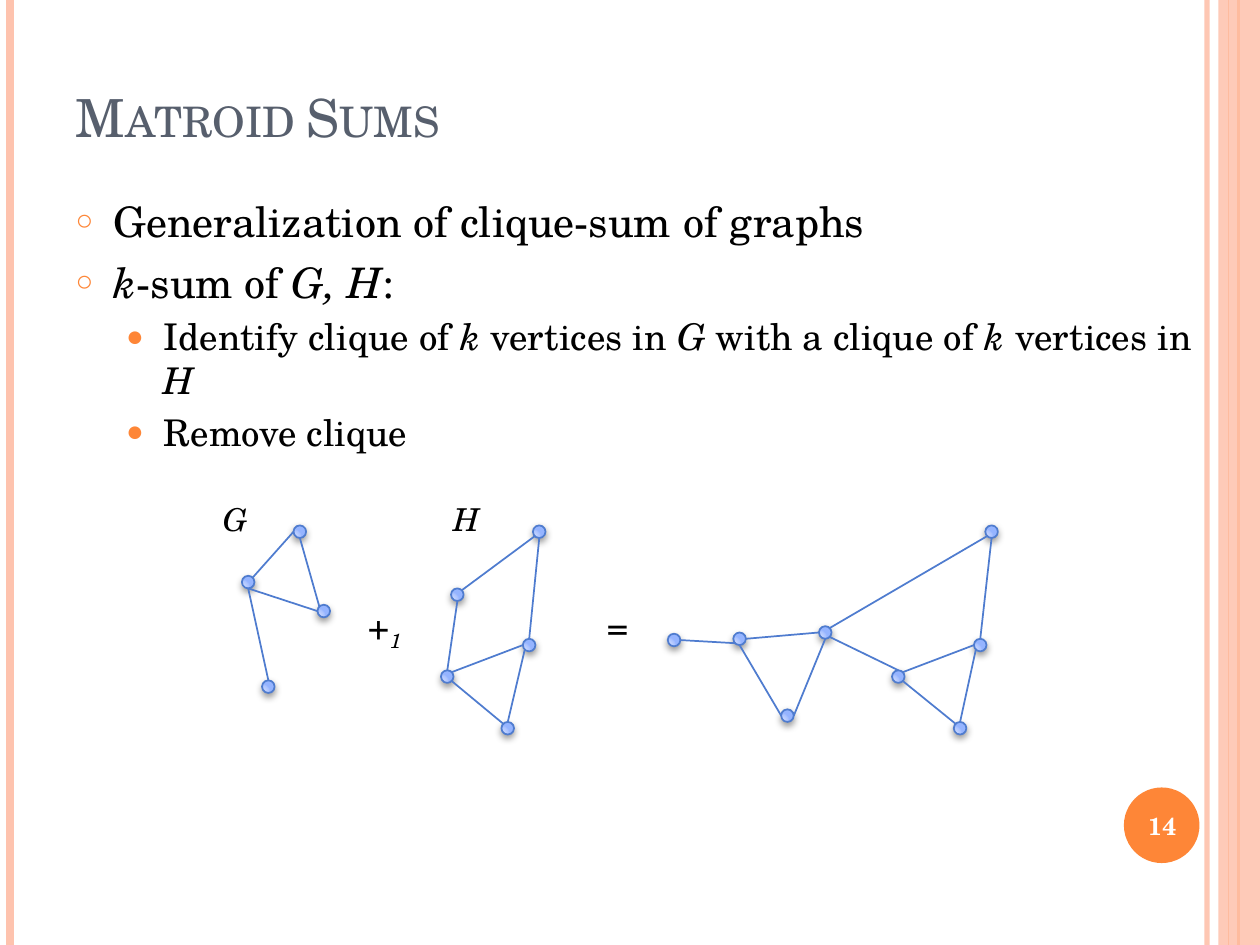
"""Build the slide on matroid sums with three linked graph drawings."""
from lxml.etree import SubElement
from pptx import Presentation
from pptx.dml.color import RGBColor
from pptx.enum.shapes import MSO_CONNECTOR, MSO_SHAPE
from pptx.enum.text import MSO_ANCHOR as ANCHOR, MSO_AUTO_SIZE as AUTO_SIZE, PP_ALIGN as ALIGN
from pptx.oxml import parse_xml
from pptx.oxml.ns import nsdecls, qn
from pptx.util import Inches, Pt

FONT = "TeX Gyre Schola"
BLACK = RGBColor(0x00, 0x00, 0x00)
WHITE = RGBColor(0xFF, 0xFF, 0xFF)
SLATE = RGBColor(0x57, 0x5F, 0x6D)
ORANGE = RGBColor(0xFE, 0x86, 0x37)
PEACH = RGBColor(0xFE, 0xC3, 0xAE)
BLUE = RGBColor(0x4F, 0x7C, 0xCF)
NODE_STOPS = [(0, "CFDCFF"), (30, "CBD9FF"), (75, "AFC6FF"), (100, "95B4FF")]

TITLE = "Matroid Sums"
BULLETS = [
    (0, "Generalization of clique-sum of graphs"),
    (0, "*k*-sum of *G, H*:"),
    (1, "Identify clique of *k* vertices in *G* with a clique of *k* vertices in *H*"),
    (1, "Remove clique"),
]
LEVELS = [
    {"size": 24, "indent": 0.3, "bullet": "○", "scale": 70, "before": '<a:spcPts val="600"/>'},
    {"size": 21, "indent": 0.7, "bullet": "●", "scale": 80, "before": '<a:spcPct val="20000"/>'},
]
STRIPES = [(9.58, PEACH, 3, 93), (0.08, PEACH, 4.5, 100), (9.83, ORANGE, 1.5, 100), (9.75, ORANGE, 0.75, 100)]
LABELS = [
    ("G", "", 1.67, 3.92, 0.46, 0.4, 18),
    ("H", "", 3.5, 3.92, 0.44, 0.4, 18),
    ("+", "1", 2.83, 4.75, 0.53, 0.44, 20),
    ("=", "", 4.72, 4.75, 0.43, 0.44, 20),
]

NODE = 0.1
SITES = {"top": (0, -1), "bottom": (0, 1), "left": (-1, 0), "right": (1, 0),
         "top left": (-0.7, -0.7), "top right": (0.7, -0.7),
         "bottom left": (-0.7, 0.7), "bottom right": (0.7, 0.7)}
HOUSE_EDGES = [
    ("base", "bottom right", "foot", "top left"),
    ("base", "top right", "corner", "left"),
    ("foot", "top", "corner", "bottom left"),
    ("corner", "top", "peak", "bottom"),
]
GRAPHS = [
    ({"hub": (1.92, 4.57), "side": (2.52, 4.8), "leaf": (2.08, 5.4), "peak": (2.33, 4.17)},
     [("hub", "top right", "peak", "left"), ("hub", "bottom", "side", "left"),
      ("peak", "bottom", "side", "top left"), ("hub", "bottom", "leaf", "top")]),
    ({"base": (3.5, 5.32), "shared": (3.58, 4.67), "corner": (4.15, 5.07),
      "peak": (4.23, 4.17), "foot": (3.98, 5.73)},
     HOUSE_EDGES + [("base", "top", "shared", "bottom"), ("shared", "top right", "peak", "bottom left")]),
    ({"hub": (5.82, 5.02), "side": (6.2, 5.63), "leaf": (5.3, 5.03), "shared": (6.5, 4.97),
      "base": (7.08, 5.32), "corner": (7.73, 5.07), "peak": (7.82, 4.17), "foot": (7.57, 5.73)},
     HOUSE_EDGES + [("hub", "right", "shared", "left"), ("hub", "bottom", "side", "left"),
                    ("shared", "bottom", "side", "right"), ("hub", "bottom left", "leaf", "right"),
                    ("base", "top", "shared", "bottom right"),
                    ("shared", "top right", "peak", "bottom left")]),
]


def place(box, left, top, width, height):
    box.left, box.top, box.width, box.height = map(Inches, (left, top, width, height))


def style(span, size, color=BLACK, italic=None, bold=None):
    font = span.font
    font.name, font.size, font.italic, font.bold = FONT, Pt(size), italic, bold
    font.color.rgb = color


def set_alpha(shape, percent):
    for color in shape._element.spPr.iter(qn("a:srgbClr")):
        SubElement(color, qn("a:alpha")).set("val", str(percent * 1000))


def add_line(page, start, end, color, width):
    line = page.shapes.add_connector(MSO_CONNECTOR.STRAIGHT, *map(Inches, start + end))
    line.line.color.rgb = color
    line.line.width = Pt(width)
    SubElement(line._element.spPr, qn("a:effectLst"))
    return line


def add_shape(page, kind, left, top, width, height, color):
    shape = page.shapes.add_shape(kind, *map(Inches, (left, top, width, height)))
    shape.fill.solid()
    shape.fill.fore_color.rgb = color
    shape.line.fill.background()
    shape.shadow.inherit = False
    return shape


def add_frame(page):
    for x, color, width, alpha in STRIPES:
        set_alpha(add_line(page, (x, 0), (x, 7.5), color, width), alpha)
    set_alpha(add_shape(page, MSO_SHAPE.RECTANGLE, 9.67, 0, 0.33, 7.5, PEACH), 87)
    add_shape(page, MSO_SHAPE.OVAL, 8.92, 6.25, 0.6, 0.6, ORANGE)
    box = page.shapes.add_textbox(*map(Inches, (8.89, 6.27, 0.67, 0.57)))
    frame = box.text_frame
    frame.word_wrap = True
    frame.vertical_anchor = ANCHOR.MIDDLE
    frame.text = "14"
    frame.paragraphs[0].alignment = ALIGN.CENTER
    style(frame.paragraphs[0].runs[0], 14, WHITE, bold=True)


def fill_title(box):
    place(box, 0.5, 0.3, 8.17, 1.25)
    frame = box.text_frame
    frame.text = TITLE
    frame.vertical_anchor = ANCHOR.MIDDLE
    frame.paragraphs[0].alignment = ALIGN.LEFT
    span = frame.paragraphs[0].runs[0]
    style(span, 30, SLATE)
    span.font._element.set("cap", "small")


def fill_body(box):
    place(box, 0.5, 1.5, 9.06, 2.17)
    frame = box.text_frame
    frame.text = "\n".join(text for _, text in BULLETS)
    frame.auto_size = AUTO_SIZE.NONE
    for para, (depth, text) in zip(frame.paragraphs, BULLETS):
        level = LEVELS[depth]
        para.clear()
        para.level = depth
        props = para._p.get_or_add_pPr()
        props.set("marL", str(Inches(level["indent"])))
        props.set("indent", str(Inches(-0.3)))
        for xml in (f'<a:spcBef {nsdecls("a")}>{level["before"]}</a:spcBef>',
                    f'<a:buClr {nsdecls("a")}><a:srgbClr val="{ORANGE}"/></a:buClr>',
                    f'<a:buSzPct {nsdecls("a")} val="{level["scale"] * 1000}"/>',
                    f'<a:buChar {nsdecls("a")} char="{level["bullet"]}"/>'):
            props.append(parse_xml(xml))
        for index, part in enumerate(text.split("*")):
            if part:
                span = para.add_run()
                span.text = part
                style(span, level["size"], italic=index % 2 == 1)


def add_node(page, left, top):
    node = add_shape(page, MSO_SHAPE.OVAL, left, top, NODE, NODE, BLUE)
    node.line.color.rgb = BLUE
    node.line.width = Pt(1)
    stops = "".join(f'<a:gs pos="{pos * 1000}"><a:srgbClr val="{color}"/></a:gs>' for pos, color in NODE_STOPS)
    props = node._element.spPr
    props.replace(props.find(qn("a:solidFill")), parse_xml(
        f'<a:gradFill {nsdecls("a")} rotWithShape="1"><a:gsLst>{stops}</a:gsLst><a:path path="circle">'
        '<a:fillToRect l="5000" t="100000" r="120000" b="10000"/></a:path></a:gradFill>'))
    props.find(qn("a:effectLst")).append(parse_xml(
        f'<a:outerShdw {nsdecls("a")} blurRad="{Pt(4)}" dist="{Pt(2)}" dir="5400000" rotWithShape="0">'
        '<a:srgbClr val="000000"><a:alpha val="40000"/></a:srgbClr></a:outerShdw>'))


def site_point(corner, site):
    return tuple(start + NODE / 2 * (1 + step) for start, step in zip(corner, SITES[site]))


def add_graph(page, nodes, edges):
    for corner in nodes.values():
        add_node(page, *corner)
    for first, first_site, second, second_site in edges:
        add_line(page, site_point(nodes[first], first_site), site_point(nodes[second], second_site), BLUE, 1)


def add_label(page, text, subscript, left, top, width, height, size):
    box = page.shapes.add_textbox(*map(Inches, (left, top, width, height)))
    frame = box.text_frame
    frame.word_wrap = False
    frame.auto_size = AUTO_SIZE.SHAPE_TO_FIT_TEXT
    frame.text = text
    para = frame.paragraphs[0]
    if subscript:
        span = para.add_run()
        span.text = subscript
        span.font._element.set("baseline", "-25000")
    for span in para.runs:
        style(span, size, italic=True)


def main():
    deck = Presentation()
    deck.slide_width, deck.slide_height = Inches(10), Inches(7.5)
    page = deck.slides.add_slide(deck.slide_layouts[1])
    add_frame(page)
    fill_title(page.shapes.title)
    fill_body(page.placeholders[1])
    for nodes, edges in GRAPHS:
        add_graph(page, nodes, edges)
    for label in LABELS:
        add_label(page, *label)
    deck.save("out.pptx")


if __name__ == "__main__":
    main()
